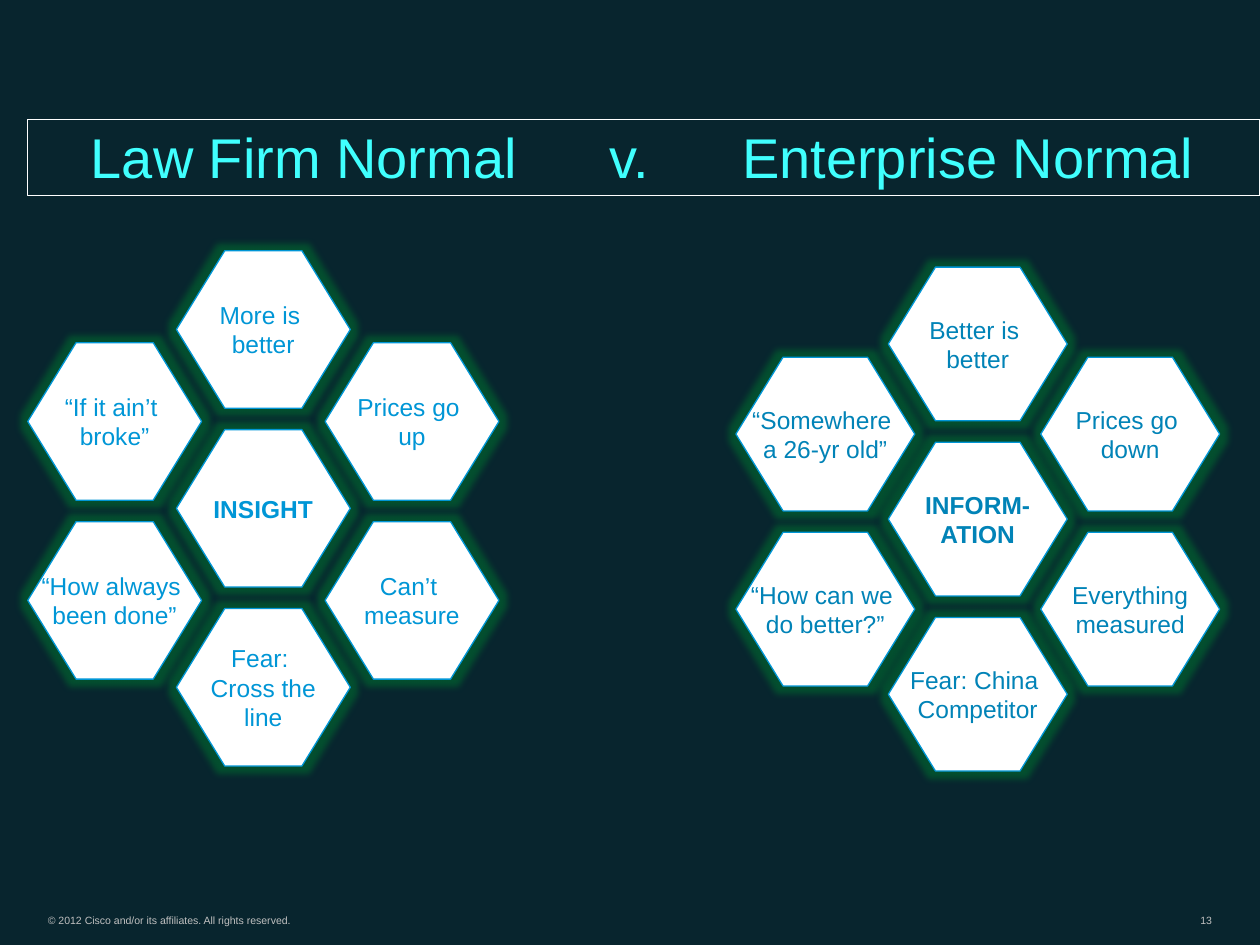
from lxml import etree
from pptx import Presentation
from pptx.dml.color import RGBColor
from pptx.enum.shapes import MSO_SHAPE
from pptx.enum.text import MSO_ANCHOR, MSO_AUTO_SIZE, PP_ALIGN
from pptx.oxml.ns import qn
from pptx.util import Inches, Pt

COLORS = {
    "background": "08252E",
    "white": "FFFFFF",
    "title": "40FFFE",
    "outline": "0096D6",
    "law": "0096D6",
    "enterprise": "0183B7",
    "glow": "006B30",
    "footer": "C0C0C0",
}
FONT = "Arial"

# Column and row of each cell, in steps from the centre of its cluster
CELLS = [(0, 0), (0, 1), (-1, 0.5), (-1, -0.5), (0, -1), (1, 0.5), (1, -0.5)]
SIDE_DROP = 0.02  # the side columns sit slightly lower than the middle one

LAW_LABELS = [
    "INSIGHT", "Fear: \nCross the\nline", "“How always \nbeen done”",
    "“If it ain’t \nbroke”", "More is \nbetter", "Can’t \nmeasure",
    "Prices go \nup",
]
ENTERPRISE_LABELS = [
    "INFORM-\nATION", "Fear: China \nCompetitor", "“How can we \ndo better?”",
    "“Somewhere \na 26-yr old”", "Better is \nbetter",
    "Everything\nmeasured", "Prices go \ndown",
]


def rgb(name):
    return RGBColor.from_string(COLORS[name])


def write(frame, text, size, color, bold=False, align=PP_ALIGN.LEFT,
          anchor=MSO_ANCHOR.MIDDLE, wrap=False, spacing=None, tabs=()):
    """Fill a text frame, one paragraph per line of text."""
    frame.word_wrap = wrap
    frame.auto_size = MSO_AUTO_SIZE.NONE
    frame.vertical_anchor = anchor
    frame.text = text
    for paragraph in frame.paragraphs:
        paragraph.alignment = align
        if spacing:
            paragraph.line_spacing = spacing
        if tabs:
            properties = paragraph._p.get_or_add_pPr()
            tab_list = etree.SubElement(properties, qn("a:tabLst"))
            for position in tabs:
                etree.SubElement(tab_list, qn("a:tab"),
                                 pos=str(Inches(position)), algn="l")
        for run in paragraph.runs:
            run.font.name = FONT
            run.font.size = Pt(size)
            run.font.bold = bold
            run.font.color.rgb = rgb(color)


class SlideBuilder:
    def __init__(self, presentation):
        self.slide = presentation.slides.add_slide(
            presentation.slide_layouts[5])
        background = self.slide.background.fill
        background.solid()
        background.fore_color.rgb = rgb("background")

    def title(self, text, left, top, width, height, indent, tabs):
        shape = self.slide.shapes.title
        shape.left, shape.top = Inches(left), Inches(top)
        shape.width, shape.height = Inches(width), Inches(height)
        shape.line.color.rgb = rgb("white")
        shape.line.width = Pt(0.75)
        frame = shape.text_frame
        frame.margin_left = Inches(indent)
        frame.margin_right = 0
        frame.margin_top = frame.margin_bottom = Inches(0.05)
        write(frame, text, 32, "title", anchor=MSO_ANCHOR.BOTTOM, wrap=True,
              spacing=0.8, tabs=tabs)

    def footer(self, text, left, width, **style):
        box = self.slide.shapes.add_textbox(
            Inches(left), Inches(7.2), Inches(width), Inches(0.19))
        frame = box.text_frame
        frame.margin_left = frame.margin_right = Inches(0.09)
        frame.margin_top = frame.margin_bottom = Inches(0.04)
        write(frame, text, 6, "footer", anchor=MSO_ANCHOR.BOTTOM, **style)

    def hexagon(self, group, text, left, top, width, height, color, bold):
        shape = group.shapes.add_shape(
            MSO_SHAPE.HEXAGON, Inches(left), Inches(top),
            Inches(width), Inches(height))
        shape.adjustments[0] = 0.307
        shape.fill.solid()
        shape.fill.fore_color.rgb = rgb("white")
        shape.line.color.rgb = rgb("outline")
        shape.line.width = Pt(0.75)
        shape.shadow.inherit = False
        self.glow(shape)
        write(shape.text_frame, text, 14, color, bold=bold,
              align=PP_ALIGN.CENTER)

    def glow(self, shape):
        effects = shape._element.spPr.find(qn("a:effectLst"))
        glow = etree.SubElement(effects, qn("a:glow"), rad=str(Pt(8)))
        color = etree.SubElement(glow, qn("a:srgbClr"), val=COLORS["glow"])
        etree.SubElement(color, qn("a:alpha"), val="60000")

    def cluster(self, labels, left, top, size, step, color):
        """Place a honeycomb around the centre cell at left, top."""
        group = self.slide.shapes.add_group_shape()
        for label, (column, row) in zip(labels, CELLS):
            self.hexagon(group, label, left + column * step[0],
                         top + row * step[1] + abs(column) * SIDE_DROP,
                         *size, color, bold=(column, row) == (0, 0))


def main():
    presentation = Presentation()
    presentation.slide_width = Inches(10)
    presentation.slide_height = Inches(7.5)
    builder = SlideBuilder(presentation)

    # Footer
    builder.footer("© 2012 Cisco and/or its affiliates. All rights reserved.",
                   0.29, 3.74, wrap=True)
    builder.footer("13", 9.43, 0.28, align=PP_ALIGN.RIGHT)

    # Title, with its three parts at tab stops
    builder.title("Law Firm Normal\tv.\tEnterprise Normal",
                  0.22, 0.95, 9.78, 0.6, indent=0.5, tabs=(4.12, 5.17))

    # Honeycombs
    builder.cluster(LAW_LABELS, 1.4, 3.41, (1.38, 1.25), (1.18, 1.42), "law")
    builder.cluster(ENTERPRISE_LABELS, 7.05, 3.51, (1.42, 1.22),
                    (1.21, 1.39), "enterprise")

    presentation.save("out.pptx")


if __name__ == "__main__":
    main()
